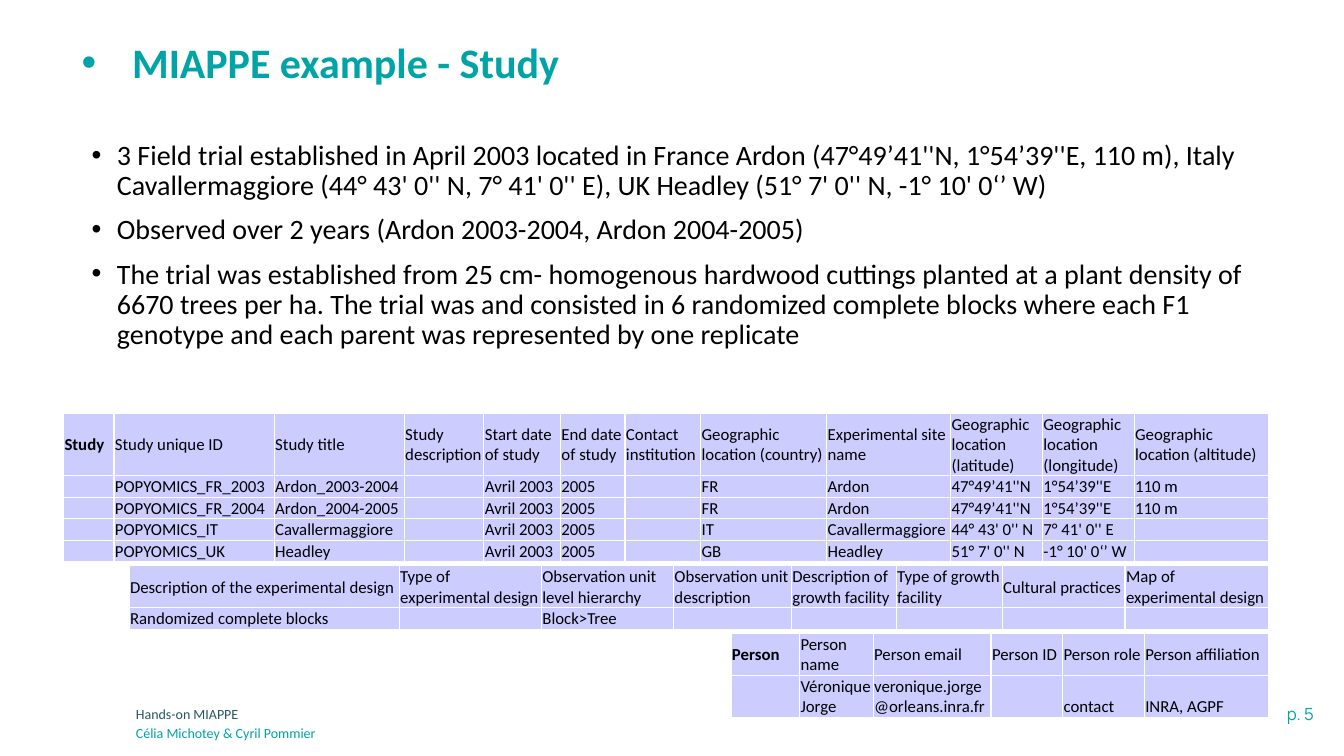
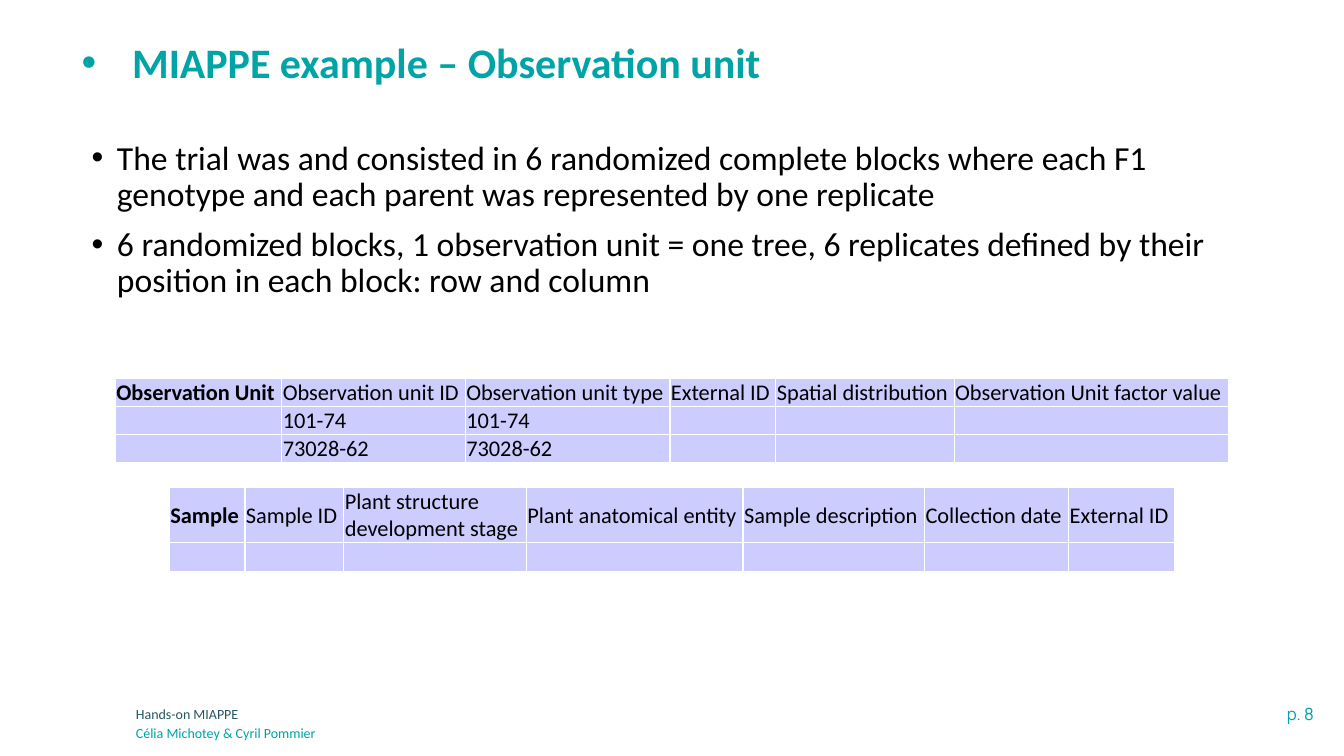
import lxml.etree
import pptx
import pptx.dml.color
import pptx.enum.text
import pptx.oxml.ns
import pptx.util

Inches, Pt = pptx.util.Inches, pptx.util.Pt
Anchor, Align = pptx.enum.text.MSO_ANCHOR, pptx.enum.text.PP_ALIGN
qn = pptx.oxml.ns.qn


class Theme:
    font, page_font = "Calibri", "Manrope"
    teal, dark_teal, black = "00A3A6", "275662", "000000"
    cell, border = "CCCCFF", "FFFFFF"
    title_size, footer_size, page_size = 30, 10, 12
    line_spacing, paragraph_gap = 0.9, 10
    line_height = 1.22          # line height as a share of the type size
    cell_inset = 0.01


WIDTH, HEIGHT = 13.33, 7.5
TITLE_BOX = (0.81, 0.16, 11.76, 0.97)
BODY_BOX = (0.81, 1.35, 11.76, 5.09)
PAGE_BOX = (10.85, 6.93, 2.28, 0.3)
TABLE_RIGHT = 12.58

# Footer lines: text, colour, top
FOOTER = [
    ("Hands-on MIAPPE", Theme.dark_teal, 6.95),
    ("Célia Michotey & Cyril Pommier", Theme.teal, 7.14),
]

# Content: "lines" holds the number of text lines in each table row
SLIDES = [
    {
        "title": "MIAPPE example - Study",
        "page": "p. 5",
        "body_size": 20,
        "bullets": [
            "3 Field trial established in April 2003 located in France Ardon "
            "(47°49’41''N, 1°54’39''E, 110 m), Italy Cavallermaggiore "
            "(44° 43' 0'' N, 7° 41' 0'' E), UK Headley (51° 7' 0'' N, -1° 10' 0‘’ W)",
            "Observed over 2 years (Ardon 2003-2004, Ardon 2004-2005)",
            "The trial was established from 25 cm- homogenous hardwood cuttings planted "
            "at a plant density of 6670 trees per ha. The trial was and consisted in 6 "
            "randomized complete blocks where each F1 genotype and each parent was "
            "represented by one replicate",
        ],
        "table_size": 12, "table_top": 4.1, "table_gap": 0.04, "centred": False,
        "tables": [
            {
                "named": True,
                "columns": [0.5, 1.59, 1.29, 0.79, 0.76, 0.64,
                            0.75, 1.25, 1.23, 0.91, 0.91, 1.33],
                "lines": [3, 1, 1, 1, 1],
                "rows": [
                    ["Study", "Study unique ID", "Study title", "Study description",
                     "Start date of study", "End date of study", "Contact institution",
                     "Geographic location (country)", "Experimental site name",
                     "Geographic location (latitude)", "Geographic location (longitude)",
                     "Geographic location (altitude)"],
                    ["", "POPYOMICS_FR_2003", "Ardon_2003-2004", "", "Avril 2003", "2005",
                     "", "FR", "Ardon", "47°49’41''N", "1°54’39''E", "110 m"],
                    ["", "POPYOMICS_FR_2004", "Ardon_2004-2005", "", "Avril 2003", "2005",
                     "", "FR", "Ardon", "47°49’41''N", "1°54’39''E", "110 m"],
                    ["", "POPYOMICS_IT", "Cavallermaggiore", "", "Avril 2003", "2005",
                     "", "IT", "Cavallermaggiore", "44° 43' 0'' N", "7° 41' 0'' E", ""],
                    ["", "POPYOMICS_UK", "Headley", "", "Avril 2003", "2005",
                     "", "GB", "Headley", "51° 7' 0'' N", "-1° 10' 0‘’ W", ""],
                ],
            },
            {
                "named": False,
                "columns": [2.68, 1.41, 1.31, 1.17, 1.04, 1.05, 1.22, 1.42],
                "lines": [2, 1],
                "rows": [
                    ["Description of the experimental design", "Type of experimental design",
                     "Observation unit level hierarchy", "Observation unit description",
                     "Description of growth facility", "Type of growth facility",
                     "Cultural practices", "Map of experimental design"],
                    ["Randomized complete blocks", "", "Block>Tree", "", "", "", "", ""],
                ],
            },
            {
                "named": True,
                "columns": [0.68, 0.73, 1.17, 0.71, 0.81, 1.23],
                "lines": [2, 2],
                "rows": [
                    ["Person", "Person name", "Person email", "Person ID",
                     "Person role", "Person affiliation"],
                    ["", "Véronique Jorge", "veronique.jorge@orleans.inra.fr", "",
                     "contact", "INRA, AGPF"],
                ],
            },
        ],
    },
    {
        "title": "MIAPPE example – Observation unit",
        "page": "p. 8",
        "body_size": 24,
        "bullets": [
            "The trial was and consisted in 6 randomized complete blocks where each F1 "
            "genotype and each parent was represented by one replicate",
            "6 randomized blocks, 1 observation unit = one tree, 6 replicates defined by "
            "their position in each block: row and column",
        ],
        "table_size": 16, "table_top": 3.75, "table_gap": 0.24, "centred": True,
        "tables": [
            {
                "named": True,
                "columns": [1.65, 1.82, 2.03, 1.05, 1.77, 2.72],
                "lines": [1, 1, 1],
                "rows": [
                    ["Observation Unit", "Observation unit ID", "Observation unit type",
                     "External ID", "Spatial distribution", "Observation Unit factor value"],
                    ["", "101-74", "101-74", "", "", ""],
                    ["", "73028-62", "73028-62", "", "", ""],
                ],
            },
            {
                "named": True,
                "columns": [0.75, 0.98, 1.81, 2.15, 1.8, 1.43, 1.05],
                "lines": [2, 1],
                "rows": [
                    ["Sample", "Sample ID", "Plant structure development stage",
                     "Plant anatomical entity", "Sample description",
                     "Collection date", "External ID"],
                    [""] * 7,
                ],
            },
        ],
    },
]


# Text helpers
def add_run(paragraph, text, size, color, bold=False, font=Theme.font):
    run = paragraph.add_run()
    run.text = text
    run.font.name, run.font.size, run.font.bold = font, Pt(size), bold
    run.font.color.rgb = pptx.dml.color.RGBColor.from_string(color)


def set_bullet(paragraph, indent):
    properties = paragraph._p.get_or_add_pPr()
    properties.set("marL", str(Inches(indent)))
    properties.set("indent", str(-Inches(indent)))
    lxml.etree.SubElement(properties, qn("a:buFont"), typeface="Arial")
    lxml.etree.SubElement(properties, qn("a:buChar"), char="•")


def fill_placeholder(shape, box, texts, indent, size, color, bold, anchor):
    shape.left, shape.top, shape.width, shape.height = map(Inches, box)
    frame = shape.text_frame
    frame.auto_size = pptx.enum.text.MSO_AUTO_SIZE.NONE
    frame.word_wrap = True
    frame.vertical_anchor = anchor
    for index, text in enumerate(texts):
        paragraph = frame.add_paragraph() if index else frame.paragraphs[0]
        set_bullet(paragraph, indent)
        paragraph.alignment = Align.LEFT
        paragraph.line_spacing = Theme.line_spacing
        paragraph.space_before = Pt(Theme.paragraph_gap if index else 0)
        add_run(paragraph, text, size, color, bold)
    return frame


def add_label(slide, box, text, size, color, font=Theme.font, align=Align.LEFT):
    frame = slide.shapes.add_textbox(*map(Inches, box)).text_frame
    frame.word_wrap = True
    frame.paragraphs[0].alignment = align
    add_run(frame.paragraphs[0], text, size, color, font=font)


# Tables
def set_borders(cell):
    properties = cell._tc.get_or_add_tcPr()
    for index, side in enumerate(("lnL", "lnR", "lnT", "lnB")):
        line = lxml.etree.Element(qn("a:" + side), w=str(Pt(1)))
        fill = lxml.etree.SubElement(line, qn("a:solidFill"))
        lxml.etree.SubElement(fill, qn("a:srgbClr"), val=Theme.border)
        properties.insert(index, line)


def fill_cell(cell, text, size, bold, anchor):
    cell.margin_left = cell.margin_right = cell.margin_top = Inches(Theme.cell_inset)
    cell.margin_bottom = 0
    cell.vertical_anchor = anchor
    cell.fill.solid()
    cell.fill.fore_color.rgb = pptx.dml.color.RGBColor.from_string(Theme.cell)
    set_borders(cell)
    paragraph = cell.text_frame.paragraphs[0]
    if text:
        add_run(paragraph, text, size, Theme.black, bold)
    else:
        lxml.etree.SubElement(paragraph._p, qn("a:endParaRPr"), sz=str(size * 100))


def add_data_table(slide, data, top, size, centred):
    """Draw one table and return its bottom edge."""
    columns, rows = data["columns"], data["rows"]
    heights = [lines * size * Theme.line_height / 72 + Theme.cell_inset
               for lines in data["lines"]]
    width, height = sum(columns), sum(heights)
    left = (WIDTH - width) / 2 if centred else TABLE_RIGHT - width
    table = slide.shapes.add_table(len(rows), len(columns), Inches(left), Inches(top),
                                   Inches(width), Inches(height)).table
    table.first_row = table.horz_banding = False
    for column, column_width in zip(table.columns, columns):
        column.width = Inches(column_width)
    for row_index, (row, row_height) in enumerate(zip(rows, heights)):
        table.rows[row_index].height = Inches(row_height)
        anchor = Anchor.BOTTOM if row_index else Anchor.MIDDLE
        for column_index, text in enumerate(row):
            bold = data["named"] and row_index == column_index == 0
            fill_cell(table.cell(row_index, column_index), text, size, bold, anchor)
    return top + height


# Slides
def add_slide(presentation, content):
    slide = presentation.slides.add_slide(presentation.slide_layouts[1])
    title = fill_placeholder(slide.shapes.title, TITLE_BOX, [content["title"]], 0.5,
                             Theme.title_size, Theme.teal, True, Anchor.MIDDLE)
    title.margin_left = 0
    fill_placeholder(slide.placeholders[1], BODY_BOX, content["bullets"], 0.25,
                     content["body_size"], Theme.black, False, Anchor.TOP)
    add_label(slide, PAGE_BOX, content["page"], Theme.page_size, Theme.teal,
              Theme.page_font, Align.RIGHT)
    for text, color, top in FOOTER:
        add_label(slide, (1.25, top, 7.34, 0.28), text, Theme.footer_size, color)
    top = content["table_top"]
    for data in content["tables"]:
        bottom = add_data_table(slide, data, top, content["table_size"], content["centred"])
        top = bottom + content["table_gap"]


def main():
    presentation = pptx.Presentation()
    presentation.slide_width, presentation.slide_height = Inches(WIDTH), Inches(HEIGHT)
    for content in SLIDES:
        add_slide(presentation, content)
    presentation.save("out.pptx")


if __name__ == "__main__":
    main()
